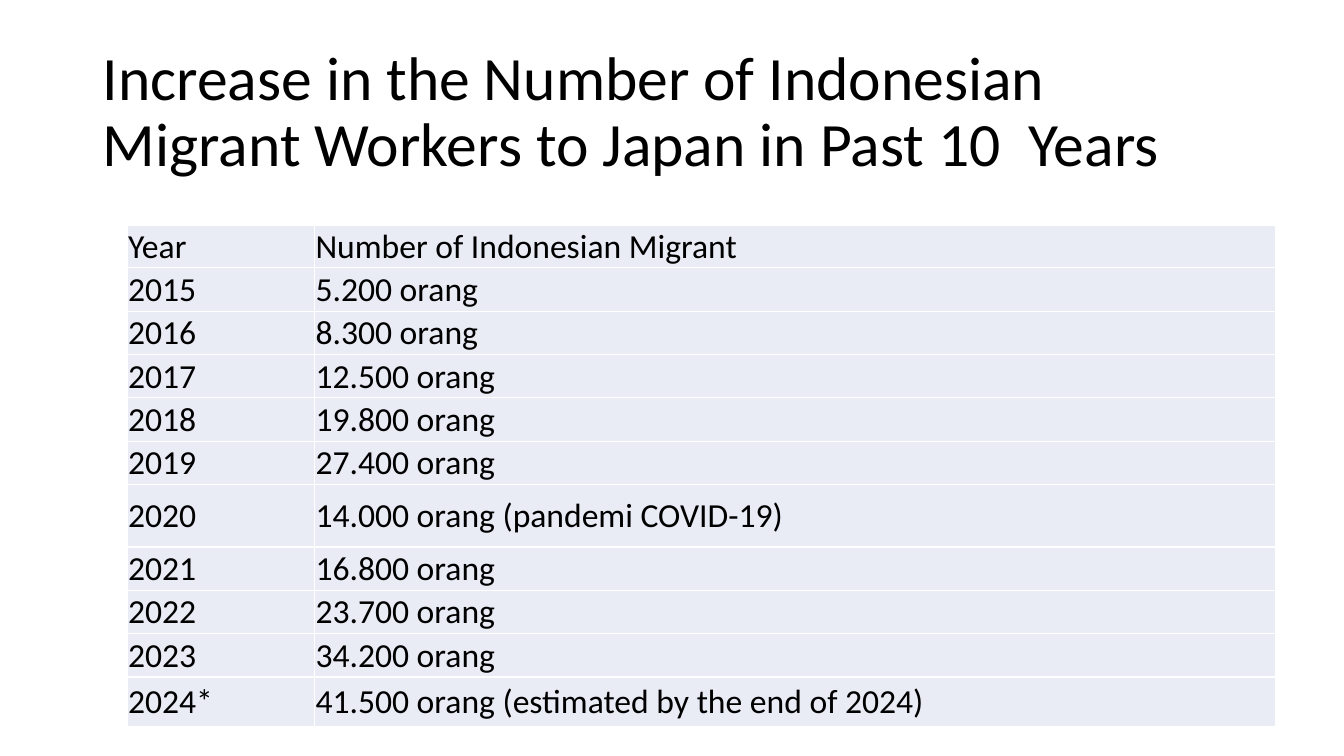
from lxml import etree
from pptx import Presentation
from pptx.dml.color import RGBColor
from pptx.enum.text import MSO_ANCHOR, MSO_AUTO_SIZE, PP_ALIGN
from pptx.oxml.ns import qn
from pptx.util import Inches, Pt

BLACK = RGBColor(0x00, 0x00, 0x00)
WHITE = RGBColor(0xFF, 0xFF, 0xFF)
PALE_BLUE = RGBColor(0xE9, 0xEB, 0xF5)
FONT = "Calibri"

TITLE = "Increase in the Number of Indonesian Migrant Workers to Japan in Past 10  Years"
MIGRANTS = [
    ("Year", "Number of Indonesian Migrant"),
    ("2015", "5.200 orang"),
    ("2016", "8.300 orang"),
    ("2017", "12.500 orang"),
    ("2018", "19.800 orang"),
    ("2019", "27.400 orang"),
    ("2020", "14.000 orang (pandemi COVID-19)"),
    ("2021", "16.800 orang"),
    ("2022", "23.700 orang"),
    ("2023", "34.200 orang"),
    ("2024*", "41.500 orang (estimated by the end of 2024)"),
]
ROW_HEIGHT = 0.43
SPECIAL_HEIGHTS = {"Year": 0.41, "2020": 0.62, "2024*": 0.49}
YEAR_WIDTH = 1.86


def format_run(r, size):
    r.font.name = FONT
    r.font.size = Pt(size)
    r.font.color.rgb = BLACK


def add_borders(cell, color, width):
    tc_pr = cell._tc.get_or_add_tcPr()
    for i, side in enumerate(("a:lnL", "a:lnR", "a:lnT", "a:lnB")):
        ln = etree.Element(qn(side), w=str(Pt(width)))
        fill = etree.SubElement(ln, qn("a:solidFill"))
        etree.SubElement(fill, qn("a:srgbClr"), val=str(color))
        tc_pr.insert(i, ln)


def add_title(s, left, top, width, height):
    sp = s.shapes.title
    sp.left, sp.top = Inches(left), Inches(top)
    sp.width, sp.height = Inches(width), Inches(height)
    tf = sp.text_frame
    tf.text = TITLE
    tf.word_wrap = True
    tf.auto_size = MSO_AUTO_SIZE.NONE
    tf.vertical_anchor = MSO_ANCHOR.MIDDLE
    p = tf.paragraphs[0]
    p.alignment = PP_ALIGN.LEFT
    p.line_spacing = 0.9
    format_run(p.runs[0], 44)


def fill_cell(cell, text):
    cell.text = text
    cell.vertical_anchor = MSO_ANCHOR.MIDDLE
    cell.margin_left = cell.margin_right = cell.margin_top = Inches(0.01)
    cell.margin_bottom = 0
    cell.fill.solid()
    cell.fill.fore_color.rgb = PALE_BLUE
    add_borders(cell, WHITE, 1)
    format_run(cell.text_frame.paragraphs[0].runs[0], 24)


def add_migrant_table(s, left, top, width, height):
    table = s.shapes.add_table(len(MIGRANTS), 2, Inches(left), Inches(top),
                               Inches(width), Inches(height)).table
    table.first_row = False
    table.horz_banding = False
    table.columns[0].width = Inches(YEAR_WIDTH)
    table.columns[1].width = Inches(width - YEAR_WIDTH)
    for row, texts in zip(table.rows, MIGRANTS):
        row.height = Inches(SPECIAL_HEIGHTS.get(texts[0], ROW_HEIGHT))
        for cell, text in zip(row.cells, texts):
            fill_cell(cell, text)


def main():
    prs = Presentation()
    prs.slide_width, prs.slide_height = Inches(13.33), Inches(7.5)
    s = prs.slides.add_slide(prs.slide_layouts[5])
    add_title(s, 0.92, 0.4, 11.5, 1.45)
    add_migrant_table(s, 1.26, 2.24, 11.39, 4.95)
    prs.save("out.pptx")


if __name__ == "__main__":
    main()
